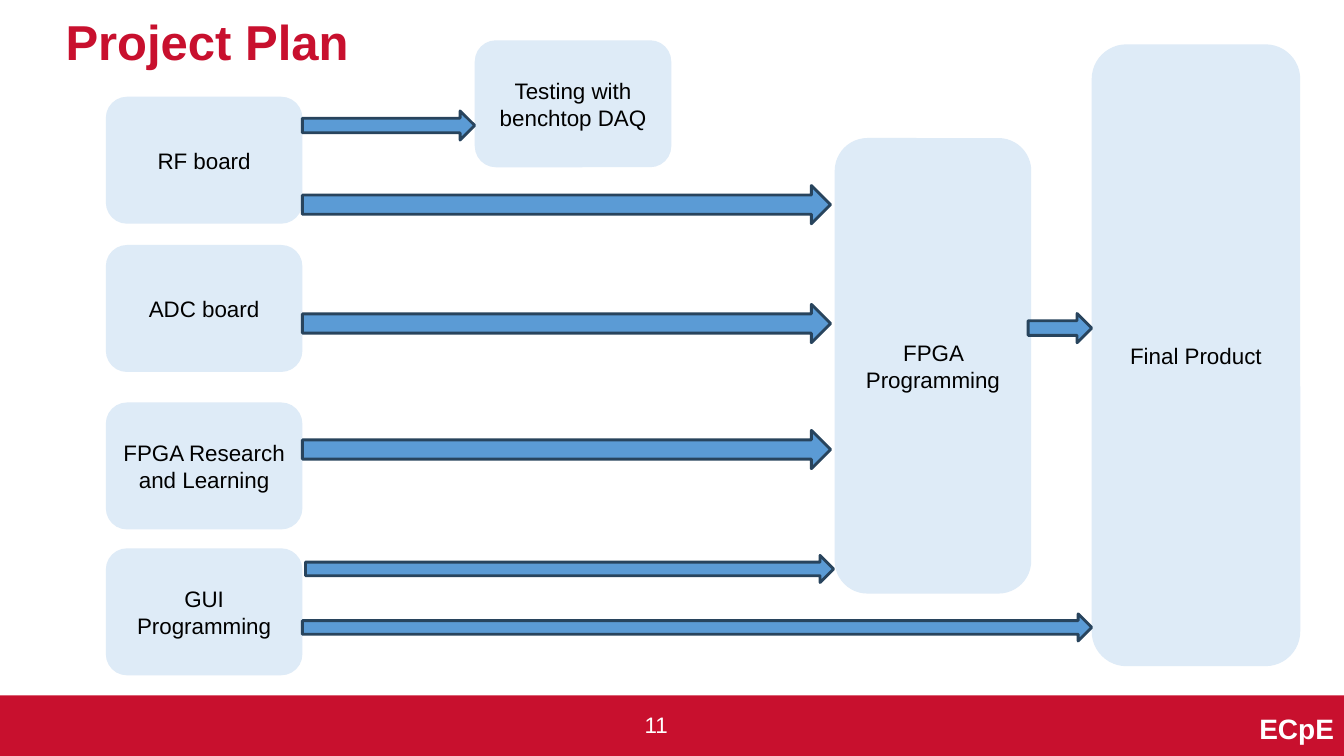
from pptx import Presentation
from pptx.dml.color import RGBColor
from pptx.enum.shapes import MSO_SHAPE
from pptx.enum.text import MSO_ANCHOR, PP_ALIGN
from pptx.util import Pt

RECTANGLE = MSO_SHAPE.RECTANGLE
ROUNDED = MSO_SHAPE.ROUNDED_RECTANGLE
RIGHT_ARROW = MSO_SHAPE.RIGHT_ARROW
TOP, MIDDLE = MSO_ANCHOR.TOP, MSO_ANCHOR.MIDDLE
LEFT, CENTER, RIGHT = PP_ALIGN.LEFT, PP_ALIGN.CENTER, PP_ALIGN.RIGHT

RED = RGBColor(0xC8, 0x10, 0x2E)
WHITE = RGBColor(0xFF, 0xFF, 0xFF)
BLACK = RGBColor(0x00, 0x00, 0x00)
PALE_BLUE = RGBColor(0xDE, 0xEB, 0xF7)
BLUE = RGBColor(0x5B, 0x9B, 0xD5)
NAVY = RGBColor(0x28, 0x44, 0x5D)


def write(frame, text, size=16, color=BLACK, bold=False, align=CENTER,
          anchor=MIDDLE, spacing=1.0):
    frame.word_wrap = True
    frame.vertical_anchor = anchor
    frame.margin_left = frame.margin_right = Pt(7.2)
    frame.margin_top = frame.margin_bottom = Pt(3.6)
    para = frame.paragraphs[0]
    para.alignment = align
    para.line_spacing = spacing
    para.space_before = Pt(0)
    span = para.add_run()
    span.text = text
    span.font.name = "Arial"
    span.font.size = Pt(size)
    span.font.bold = bold
    span.font.color.rgb = color


class PlanSlide:
    def __init__(self, slide):
        self.slide = slide

    def title(self, text, left, top, width, height):
        box = self.slide.shapes.title
        box.left, box.top = Pt(left), Pt(top)
        box.width, box.height = Pt(width), Pt(height)
        write(box.text_frame, text, size=35, color=RED, bold=True,
              align=LEFT, spacing=0.9)

    def shape(self, kind, left, top, width, height, fill, line=None):
        shape = self.slide.shapes.add_shape(
            kind, Pt(left), Pt(top), Pt(width), Pt(height))
        shape.shadow.inherit = False
        shape.fill.solid()
        shape.fill.fore_color.rgb = fill
        if line is None:
            shape.line.fill.background()
        else:
            shape.line.color.rgb = line
            shape.line.width = Pt(2)
        return shape

    def step(self, text, left, top, width=140.4, height=90.7):
        box = self.shape(ROUNDED, left, top, width, height, PALE_BLUE)
        write(box.text_frame, text)

    def arrow(self, left, top, width, height):
        self.shape(RIGHT_ARROW, left, top, width, height, BLUE, NAVY)

    def label(self, text, left, top, width, height, **style):
        box = self.slide.shapes.add_textbox(
            Pt(left), Pt(top), Pt(width), Pt(height))
        write(box.text_frame, text, color=WHITE, **style)


def main():
    deck = Presentation()
    deck.slide_width, deck.slide_height = Pt(960), Pt(540)
    page = PlanSlide(deck.slides.add_slide(deck.slide_layouts[5]))

    page.shape(RECTANGLE, 0, 496.8, 960, 43.2, RED)
    page.label("ECpE", 636, 505.6, 324, 28.8, size=20, bold=True, align=RIGHT)
    page.label("11", 453.4, 504.2, 35.3, 26.6, align=LEFT, anchor=TOP)
    page.title("Project Plan", 39.6, 9.4, 882, 45.4)

    tasks = [("RF board", 69.1), ("ADC board", 175),
             ("FPGA Research and Learning", 287.5), ("GUI Programming", 391.7)]
    for text, top in tasks:
        page.step(text, 75.6, top)
    page.step("Testing with benchtop DAQ", 339.1, 28.8)
    page.step("FPGA Programming", 596.2, 98.6, height=325.4)
    page.step("Final Product", 779.8, 31.7, width=149, height=444.2)

    for top in (132.5, 217.4, 307.4):
        page.arrow(216, top, 377.3, 27.4)
    page.arrow(216, 79.2, 123.1, 20.9)
    page.arrow(218.2, 396.7, 377.3, 19.4)
    page.arrow(216, 438.5, 563.8, 19.4)
    page.arrow(734.4, 223.9, 45.4, 20.9)

    deck.save("out.pptx")


if __name__ == "__main__":
    main()
